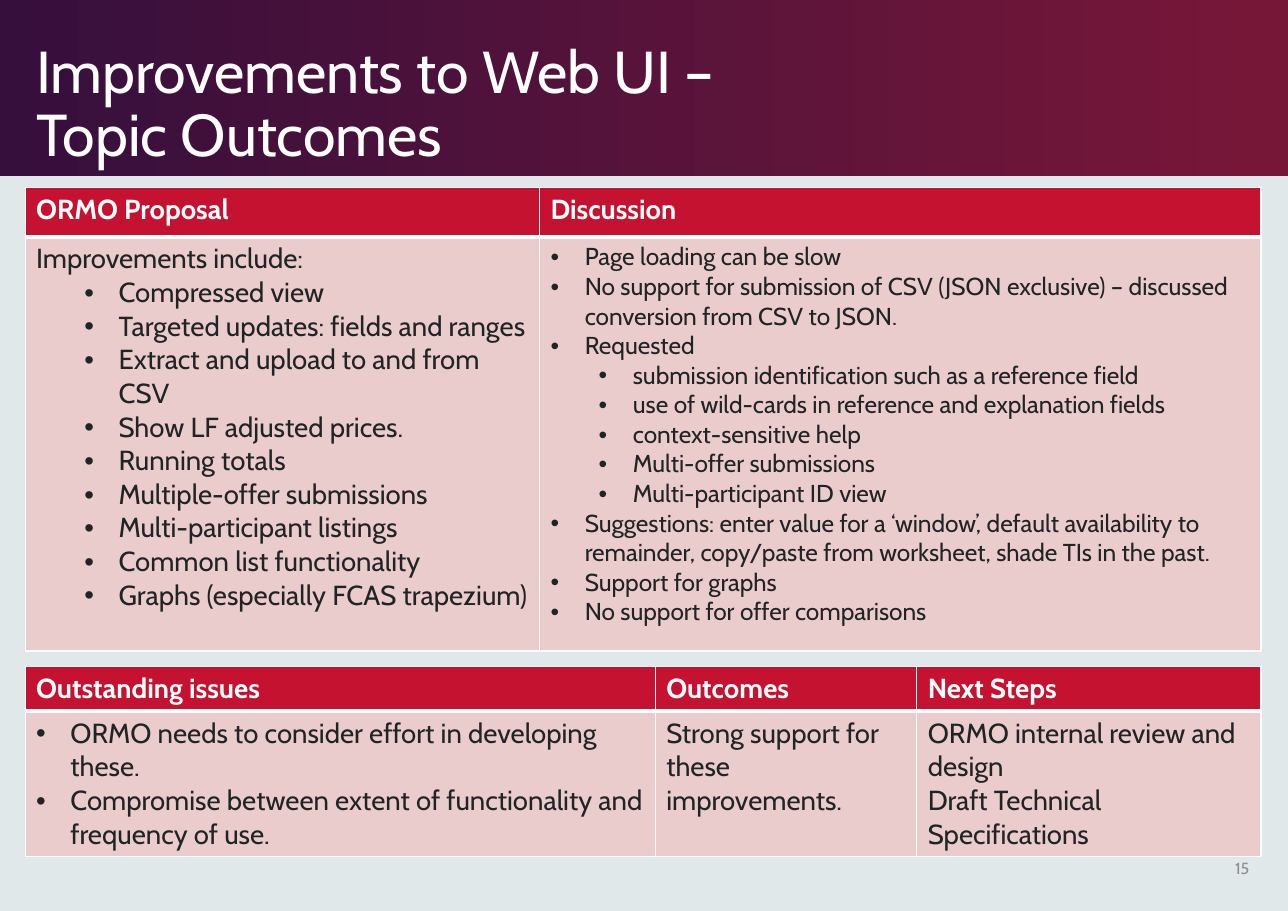
from lxml import etree
from pptx import Presentation
from pptx import util as u
from pptx.dml import color
from pptx.enum import shapes, text
from pptx.oxml import ns

Cm, Pt = u.Cm, u.Pt

COLOURS = {
    "page": "E0E8EA", "band_left": "360F3C", "band_right": "771738",
    "header": "C41230", "body": "EACCCD", "ink": "222324",
    "white": "FFFFFF", "number": "8D8D8E",
}
INDENTS = {1: 0.79, 2: 1.9}  # bullet level: left margin in cm
HANGING = 0.79

# Cell content: (bullet level, text), where level 0 has no bullet
PROPOSAL = [(0, "Improvements include:")] + [(2, item) for item in (
    "Compressed view",
    "Targeted updates: fields and ranges",
    "Extract and upload to and from CSV",
    "Show LF adjusted prices.",
    "Running totals",
    "Multiple-offer submissions",
    "Multi-participant listings",
    "Common list functionality",
    "Graphs (especially FCAS trapezium)",
)]
DISCUSSION = [
    (1, "Page loading can be slow"),
    (1, "No support for submission of CSV (JSON exclusive) – discussed "
        "conversion from CSV to JSON."),
    (1, "Requested"),
    (2, "submission identification such as a reference field"),
    (2, "use of wild-cards in reference and explanation fields"),
    (2, "context-sensitive help"),
    (2, "Multi-offer submissions"),
    (2, "Multi-participant ID view"),
    (1, "Suggestions: enter value for a ‘window’, default availability to "
        "remainder, copy/paste from worksheet, shade TIs in the past."),
    (1, "Support for graphs"),
    (1, "No support for offer comparisons"),
]
ISSUES = [
    (1, "ORMO needs to consider effort in developing these."),
    (1, "Compromise between extent of functionality and frequency of use."),
]
OUTCOMES = [(0, "Strong support for these improvements.")]
NEXT_STEPS = [
    (0, "ORMO internal review and design"),
    (0, "Draft Technical Specifications"),
]


def rgb(name):
    return color.RGBColor.from_string(COLOURS[name])


def format_font(font, size, colour, bold=False):
    for key, value in {"name": "Cabin", "size": Pt(size), "bold": bold}.items():
        setattr(font, key, value)
    font.color.rgb = rgb(colour)


def add_bullet(paragraph, level):
    props = paragraph._p.get_or_add_pPr()
    props.set("marL", str(Cm(INDENTS[level])))
    props.set("indent", str(-Cm(HANGING)))
    etree.SubElement(props, ns.qn("a:buFont"), typeface="Arial")
    etree.SubElement(props, ns.qn("a:buChar"), char="•")


def set_borders(cell, widths):
    props = cell._tc.get_or_add_tcPr()
    for side, width in widths.items():
        line = etree.SubElement(props, ns.qn(f"a:ln{side}"), w=str(Pt(width)))
        fill = etree.SubElement(line, ns.qn("a:solidFill"))
        etree.SubElement(fill, ns.qn("a:srgbClr"), val=COLOURS["white"])


def fill_cell(cell, lines, size, is_header):
    widths = {"L": 1, "R": 1, "T": 1, "B": 1}
    widths["B" if is_header else "T"] = 3
    set_borders(cell, widths)
    cell.fill.solid()
    cell.fill.fore_color.rgb = rgb("header" if is_header else "body")
    frame = cell.text_frame
    for index, (level, line) in enumerate(lines):
        paragraph = frame.add_paragraph() if index else frame.paragraphs[0]
        if level:
            paragraph.level = level - 1
            add_bullet(paragraph, level)
        run = paragraph.add_run()
        run.text = line
        format_font(run.font, size, "white" if is_header else "ink", is_header)


def add_topic_table(slide, top, row_heights, columns):
    """Each column is (width, heading, body lines, body text size)."""
    frame = slide.shapes.add_table(
        2, len(columns), Cm(0.58), Cm(top),
        Cm(sum(column[0] for column in columns)), Cm(sum(row_heights)))
    table = frame.table
    table.horz_banding = False
    for row, height in zip(table.rows, row_heights):
        row.height = Cm(height)
    for index, (width, heading, lines, size) in enumerate(columns):
        table.columns[index].width = Cm(width)
        fill_cell(table.cell(0, index), [(0, heading)], 18, True)
        fill_cell(table.cell(1, index), lines, size, False)


def add_band(slide, width):
    band = slide.shapes.add_shape(
        shapes.MSO_SHAPE.RECTANGLE, 0, 0, width, Cm(4.06))
    band.shadow.inherit = False
    band.line.fill.background()
    band.fill.gradient()
    band.fill.gradient_angle = 0
    stops = zip(band.fill.gradient_stops, (0, 0.99), ("band_left", "band_right"))
    for stop, position, name in stops:
        stop.position = position
        stop.color.rgb = rgb(name)
    slide.shapes._spTree.insert(2, band._element)  # behind the title


def set_title(slide, lines):
    title = slide.shapes.title
    place = {"left": 0.58, "top": 0.41, "width": 25.91, "height": 3.63}
    for key, value in place.items():
        setattr(title, key, Cm(value))
    frame = title.text_frame
    layout = {"vertical_anchor": text.MSO_ANCHOR.BOTTOM, "word_wrap": True,
              "auto_size": text.MSO_AUTO_SIZE.NONE}
    for key, value in layout.items():
        setattr(frame, key, value)
    heading = frame.paragraphs[0]
    heading.alignment = text.PP_ALIGN.LEFT
    heading.line_spacing = 0.9
    for index, line in enumerate(lines):
        if index:
            heading.add_line_break()
        run = heading.add_run()
        run.text = line
        format_font(run.font, 38.6, "white")


def add_page_number(slide, number):
    box = slide.shapes.add_textbox(Cm(27.66), Cm(19.46), Cm(1.4), Cm(1.12))
    frame = box.text_frame
    frame.word_wrap = True
    frame.vertical_anchor = text.MSO_ANCHOR.MIDDLE
    paragraph = frame.paragraphs[0]
    paragraph.alignment = text.PP_ALIGN.RIGHT
    run = paragraph.add_run()
    run.text = number
    format_font(run.font, 10.5, "number")


def main():
    deck = Presentation()
    deck.slide_width, deck.slide_height = Cm(29.7), Cm(21)
    slide = deck.slides.add_slide(deck.slide_layouts[5])
    slide.background.fill.solid()
    slide.background.fill.fore_color.rgb = rgb("page")

    # Heading
    add_band(slide, deck.slide_width)
    set_title(slide, ("Improvements to Web UI – ", "Topic Outcomes"))

    # Results and follow-up
    add_topic_table(slide, 15.36, (0.91, 2.9), [
        (14.53, "Outstanding issues", ISSUES, 18),
        (6.03, "Outcomes", OUTCOMES, 18),
        (7.94, "Next Steps", NEXT_STEPS, 18),
    ])
    add_page_number(slide, "15")

    # Proposal and discussion
    add_topic_table(slide, 4.32, (1.14, 9.55), [
        (11.86, "ORMO Proposal", PROPOSAL, 18),
        (16.64, "Discussion", DISCUSSION, 16),
    ])
    deck.save("out.pptx")


if __name__ == "__main__":
    main()
